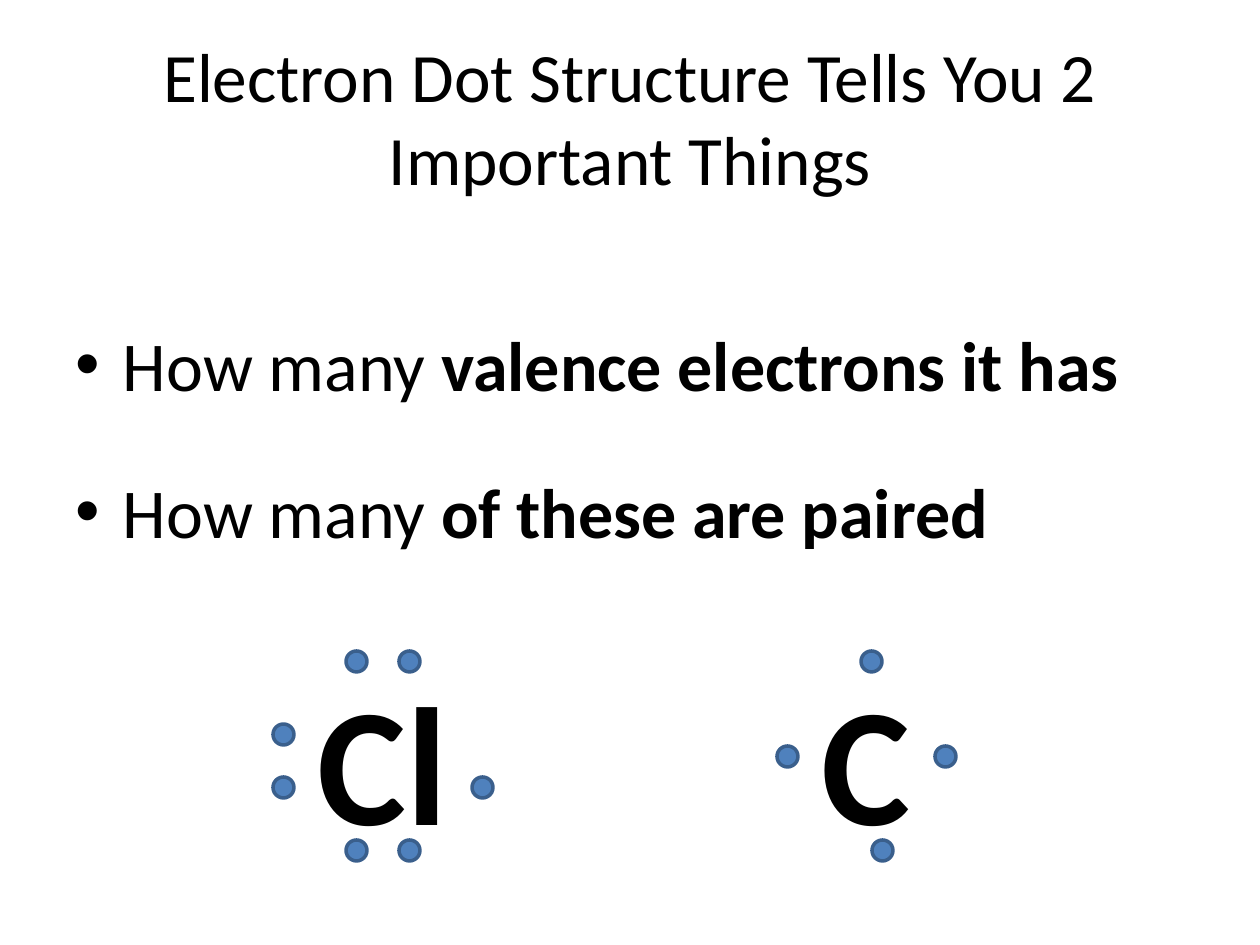
from lxml import etree
from pptx import Presentation
from pptx.dml.color import RGBColor
from pptx.enum.shapes import MSO_SHAPE
from pptx.enum.text import MSO_ANCHOR, MSO_AUTO_SIZE, PP_ALIGN
from pptx.oxml.ns import qn
from pptx.util import Pt

SCALE = 914400 / 126
BLACK = RGBColor(0x00, 0x00, 0x00)
BLUE = RGBColor(0x4F, 0x81, 0xBD)
EDGE = RGBColor(0x3A, 0x5F, 0x8C)
OVAL = MSO_SHAPE.OVAL
MIDDLE = MSO_ANCHOR.MIDDLE
FIXED, GROW = MSO_AUTO_SIZE.NONE, MSO_AUTO_SIZE.SHAPE_TO_FIT_TEXT
CENTER, LEFT = PP_ALIGN.CENTER, PP_ALIGN.LEFT

DOT = 21
STOPS = (252, 378, 504)
CL_DOTS = [(346, 651), (399, 651), (273, 724), (273, 777),
           (472, 777), (399, 840), (346, 840)]
C_DOTS = [(935, 746), (872, 840), (777, 746), (861, 651)]
POINTS = [("How many ", "valence electrons it has"),
          ("How many ", "of these are paired")]


def px(*vals):
    return [round(val * SCALE) for val in vals]


def apply(item, **form):
    for key, val in form.items():
        setattr(item, key, val)


def place(shape, *box):
    apply(shape, **dict(zip(("left", "top", "width", "height"), px(*box))))


def add_run(para, text, size, bold=False):
    run = para.add_run()
    run.text = text
    apply(run.font, name="Calibri", size=Pt(size), bold=bold)
    run.font.color.rgb = BLACK


def add_title(slide, text):
    title = slide.shapes.title
    place(title, 63, 38, 1134, 157)
    apply(title.text_frame, auto_size=FIXED, vertical_anchor=MIDDLE)
    para = title.text_frame.paragraphs[0]
    para.alignment = CENTER
    add_run(para, text, 39.6)


def add_list(slide, points):
    body = slide.placeholders[1]
    place(body, 63, 315, 1134, 529)
    frame = body.text_frame
    frame.auto_size = FIXED
    for rank, (plain, strong) in enumerate(points):
        para = frame.add_paragraph() if rank else frame.paragraphs[0]
        if rank:
            para.space_before = Pt(36)
        add_run(para, plain, 40)
        add_run(para, strong, 40, True)


def set_tabs(para, stops):
    props = para._p.get_or_add_pPr()
    tabs = etree.SubElement(props, qn("a:tabLst"))
    for stop in px(*stops):
        etree.SubElement(tabs, qn("a:tab"), pos=str(stop), algn="l")


def add_label(slide, text, *box):
    label = slide.shapes.add_textbox(*px(*box))
    apply(label.text_frame, word_wrap=False, auto_size=GROW)
    para = label.text_frame.paragraphs[0]
    para.alignment = LEFT
    set_tabs(para, STOPS)
    add_run(para, text, 96, True)


def add_dot(slide, left, top):
    dot = slide.shapes.add_shape(OVAL, *px(left, top, DOT, DOT))
    dot.shadow.inherit = False
    dot.fill.solid()
    dot.fill.fore_color.rgb = BLUE
    dot.line.color.rgb = EDGE
    dot.line.width = Pt(2)


def main():
    deck = Presentation()
    apply(deck, **dict(zip(("slide_width", "slide_height"), px(1260, 945))))
    slide = deck.slides.add_slide(deck.slide_layouts[1])
    add_title(slide, "Electron Dot Structure Tells You 2 Important Things")
    add_list(slide, POINTS)
    add_label(slide, "Cl\t\t\tC", 305, 651, 624, 217)
    for left, top in CL_DOTS + C_DOTS:
        add_dot(slide, left, top)
    deck.save("out.pptx")


main()
